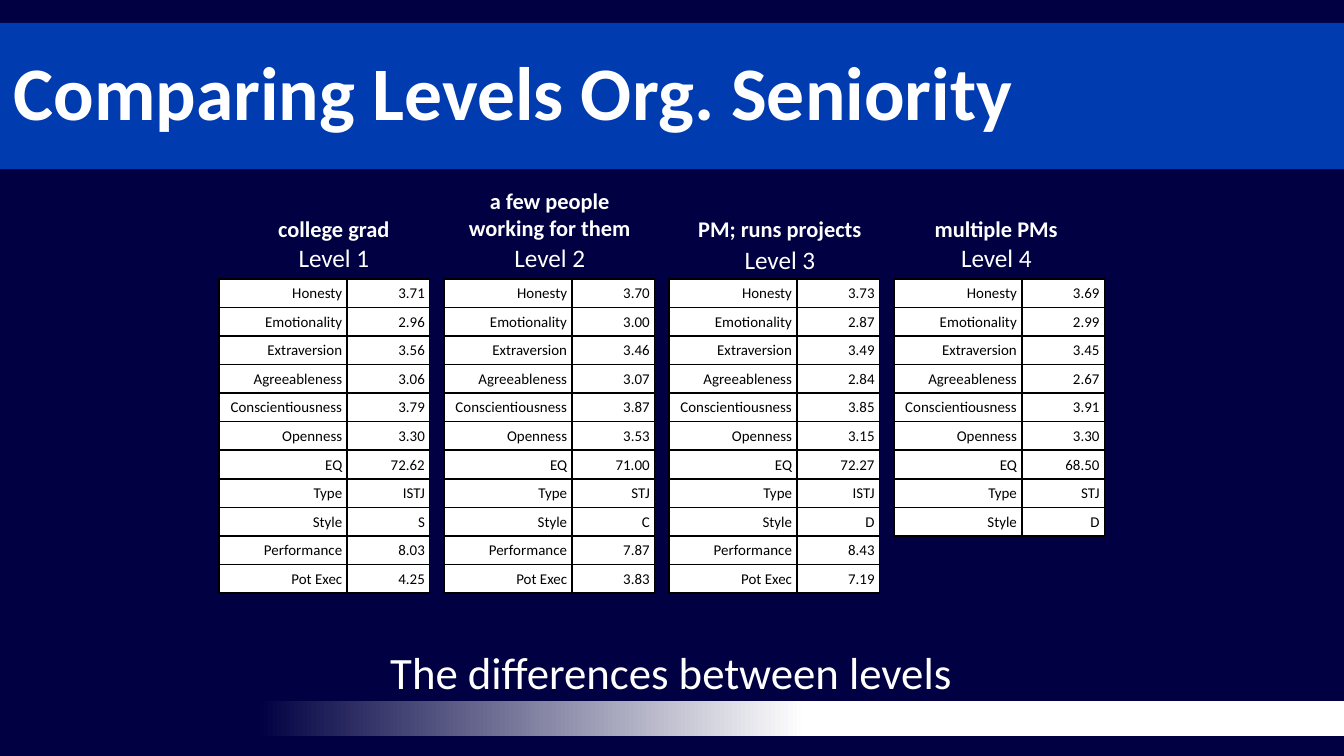
from dataclasses import dataclass

from lxml import etree
from pptx import Presentation
from pptx.dml.color import RGBColor
from pptx.enum.shapes import MSO_SHAPE
from pptx.enum.text import MSO_ANCHOR, PP_ALIGN
from pptx.oxml.ns import qn
from pptx.slide import Slide
from pptx.util import Cm, Pt

RECTANGLE = MSO_SHAPE.RECTANGLE
MIDDLE, BOTTOM = MSO_ANCHOR.MIDDLE, MSO_ANCHOR.BOTTOM
LEFT, CENTER, RIGHT = PP_ALIGN.LEFT, PP_ALIGN.CENTER, PP_ALIGN.RIGHT

NAVY = RGBColor(0x00, 0x00, 0x42)
BLUE = RGBColor(0x00, 0x3B, 0xB0)
WHITE = RGBColor(0xFF, 0xFF, 0xFF)
BLACK = RGBColor(0x00, 0x00, 0x00)
FONT = "Calibri"

MEASURES = (
    "Honesty", "Emotionality", "Extraversion", "Agreeableness",
    "Conscientiousness", "Openness", "EQ", "Type", "Style",
    "Performance", "Pot Exec",
)
TABLE_LEFT, TABLE_TOP, TABLE_STEP = 4.14, 5.27, 4.25
COLUMN_WIDTHS = (2.42, 1.56)
ROW_HEIGHT = 0.54
CELL_MARGIN = Cm(0.09)
CAPTION_BOTTOM = 4.7


@dataclass
class Level:
    name: str
    caption: str
    center: float
    values: tuple[str, ...]
    name_top: float = 4.45
    caption_height: float = 0.76


LEVELS = (
    Level("Level 1", "college grad", 6.31,
          ("3.71", "2.96", "3.56", "3.06", "3.79", "3.30", "72.62",
           "ISTJ", "S", "8.03", "4.25")),
    Level("Level 2", "a few people working for them", 10.39,
          ("3.70", "3.00", "3.46", "3.07", "3.87", "3.53", "71.00",
           "STJ", "C", "7.87", "3.83"), caption_height=1.28),
    Level("Level 3", "PM; runs projects", 14.74,
          ("3.73", "2.87", "3.49", "2.84", "3.85", "3.15", "72.27",
           "ISTJ", "D", "8.43", "7.19"), name_top=4.5),
    Level("Level 4", "multiple PMs", 18.83,
          ("3.69", "2.99", "3.45", "2.67", "3.91", "3.30", "68.50",
           "STJ", "D")),
)


def write(text_frame, text: str, size: float, color: RGBColor,
          alignment: PP_ALIGN, bold: bool = False) -> None:
    paragraph = text_frame.paragraphs[0]
    paragraph.text = text
    paragraph.alignment = alignment
    paragraph.font.name = FONT
    paragraph.font.size = Pt(size)
    paragraph.font.bold = bold
    paragraph.font.color.rgb = color


def add_label(slide: Slide, text: str, center: float, top: float,
              width: float, height: float, size: float,
              bold: bool = False) -> None:
    """Add a white text box centred on a horizontal position in cm."""
    label = slide.shapes.add_textbox(
        Cm(center - width / 2), Cm(top), Cm(width), Cm(height))
    label.text_frame.word_wrap = True
    write(label.text_frame, text, size, WHITE, CENTER, bold)


def add_borders(cell) -> None:
    properties = cell._tc.get_or_add_tcPr()
    for position, side in enumerate(("a:lnL", "a:lnR", "a:lnT", "a:lnB")):
        line = etree.Element(qn(side), w=str(Pt(1)))
        fill = etree.SubElement(line, qn("a:solidFill"))
        etree.SubElement(fill, qn("a:srgbClr"), val=str(BLACK))
        properties.insert(position, line)


def add_score_table(slide: Slide, left: float, values: tuple[str, ...]) -> None:
    table = slide.shapes.add_table(
        len(values), len(COLUMN_WIDTHS), Cm(left), Cm(TABLE_TOP),
        Cm(sum(COLUMN_WIDTHS)), Cm(ROW_HEIGHT * len(values))).table
    table.first_row = False
    table.horz_banding = False
    for column, width in zip(table.columns, COLUMN_WIDTHS):
        column.width = Cm(width)
    for row, texts in zip(table.rows, zip(MEASURES, values)):
        row.height = Cm(ROW_HEIGHT)
        for cell, text in zip(row.cells, texts):
            cell.fill.solid()
            cell.fill.fore_color.rgb = WHITE
            cell.vertical_anchor = BOTTOM
            cell.margin_left = cell.margin_right = CELL_MARGIN
            cell.margin_top = cell.margin_bottom = CELL_MARGIN
            write(cell.text_frame, text, 8, BLACK, RIGHT)
            add_borders(cell)


def add_title(slide: Slide) -> None:
    title = slide.shapes.title
    title.left, title.top = Cm(0), Cm(0.43)
    title.width, title.height = Cm(25.4), Cm(2.77)
    title.fill.solid()
    title.fill.fore_color.rgb = BLUE
    title.text_frame.vertical_anchor = MIDDLE
    write(title.text_frame, "Comparing Levels Org. Seniority", 40.5, WHITE,
          LEFT, bold=True)
    title.text_frame.paragraphs[0].line_spacing = 0.9


def add_gradient_bar(slide: Slide) -> None:
    bar = slide.shapes.add_shape(
        RECTANGLE, Cm(3.28), Cm(13.26), Cm(22.12), Cm(0.66))
    bar.shadow.inherit = False
    bar.line.fill.background()
    bar.fill.gradient()
    bar.fill.gradient_angle = 0
    stops = ((0.07, NAVY), (0.54, WHITE))
    for stop, (position, color) in zip(bar.fill.gradient_stops, stops):
        stop.position = position
        stop.color.rgb = color


def main() -> None:
    presentation = Presentation()
    presentation.slide_width = Cm(25.4)
    presentation.slide_height = Cm(14.29)
    slide = presentation.slides.add_slide(presentation.slide_layouts[5])
    slide.background.fill.solid()
    slide.background.fill.fore_color.rgb = NAVY

    add_gradient_bar(slide)
    add_title(slide)
    for index, level in enumerate(LEVELS):
        add_score_table(slide, TABLE_LEFT + TABLE_STEP * index, level.values)
        add_label(slide, level.name, level.center, level.name_top,
                  2.4, 0.84, 13.5)
        add_label(slide, level.caption, level.center,
                  CAPTION_BOTTOM - level.caption_height,
                  3.94, level.caption_height, 12, bold=True)
    add_label(slide, "The differences between levels", 12.68, 12.07,
              13.31, 1.27, 24)
    presentation.save("out.pptx")


if __name__ == "__main__":
    main()
